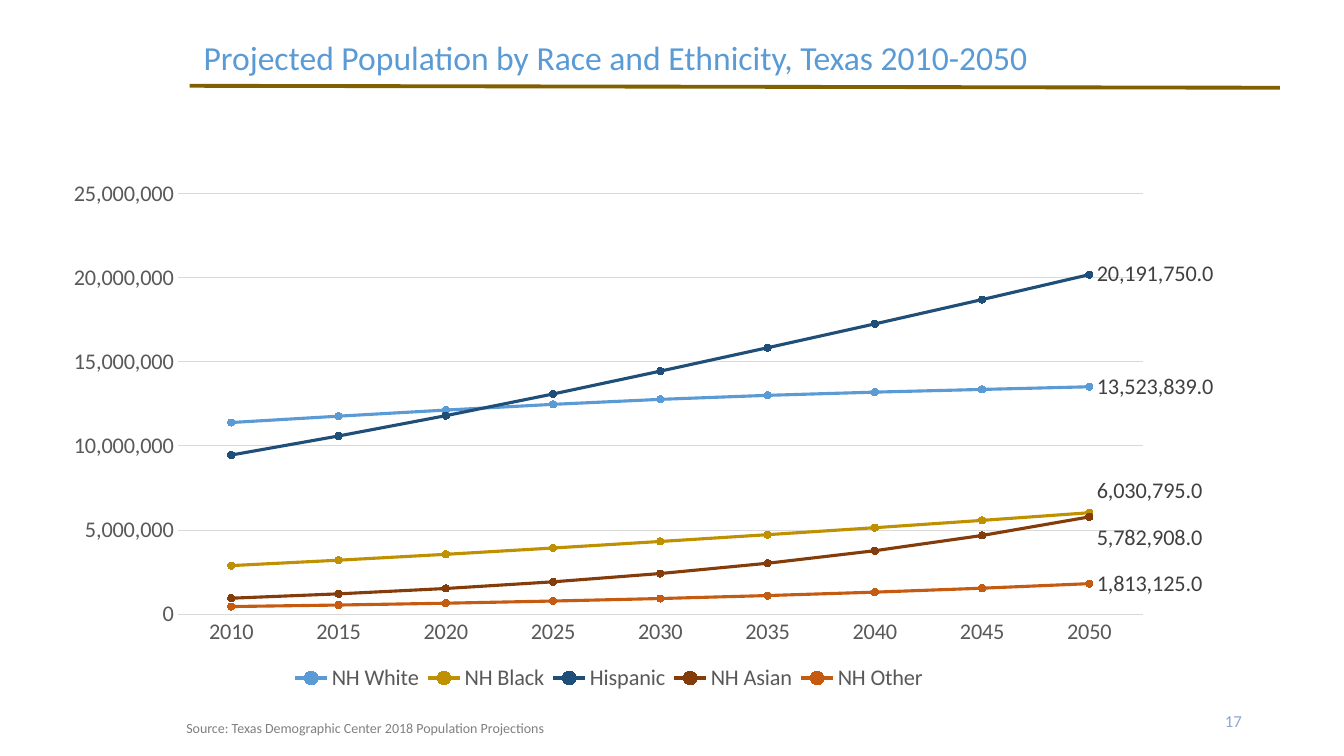
from dataclasses import dataclass

from lxml import etree
from pptx import Presentation
from pptx import util as u
from pptx.chart import data
from pptx.dml.color import RGBColor
from pptx.enum import chart as ch, shapes, text
from pptx.oxml import ns

Pt = u.Pt


@dataclass(frozen=True)
class Theme:
    font: str = "Calibri"
    title: str = "5B9BD5"
    rule: str = "806000"
    page: str = "8FA5D1"
    note: str = "808080"
    axis: str = "595959"
    label: str = "404040"
    grid: str = "D9D9D9"
    big: int = 24
    mid: int = 16
    small: int = 12
    tiny: int = 10


THEME = Theme()
YEARS = [str(year) for year in range(2010, 2051, 5)]

# Name, colour, end label shift (share of chart width and height), values
GROUPS = [
    ("NH White", "5B9BD5", None,
     (11397345, 11773981, 12138523, 12478060, 12774056,
      13013921, 13203514, 13364537, 13523839)),
    ("NH Black", "BF9000", (0, -0.04),
     (2886825, 3207833, 3557892, 3931512, 4322983,
      4725913, 5141963, 5575549, 6030795)),
    ("Hispanic", "1F4E79", None,
     (9460921, 10594952, 11804659, 13094633, 14452949,
      15845750, 17260820, 18706844, 20191750)),
    ("NH Asian", "843C0B", (0, 0.04),
     (948426, 1206812, 1525629, 1921363, 2414732,
      3025663, 3772125, 4678035, 5782908)),
    ("NH Other", "C55A11", None,
     (452044, 542674, 651069, 779336, 929709,
      1105260, 1308068, 1542075, 1813125)),
]


def rgb(code):
    return RGBColor.from_string(code)


def style(font, size, color):
    font.name = THEME.font
    font.size = Pt(size)
    font.color.rgb = rgb(color)


def stroke(line, color, width):
    line.color.rgb = rgb(color)
    line.width = Pt(width)


def write(shape, words, size, color, align, anchor):
    frame = shape.text_frame
    frame.word_wrap = True
    frame.vertical_anchor = anchor
    para = frame.paragraphs[0]
    para.alignment = align
    run = para.add_run()
    run.text = words
    style(run.font, size, color)
    return para


def add_note(slide, box, *args):
    return write(slide.shapes.add_textbox(*map(Pt, box)), *args)


def add_title(slide, box, words):
    shape = slide.shapes.title
    shape.left, shape.top, shape.width, shape.height = map(Pt, box)
    para = write(shape, words, THEME.big, THEME.title,
                 text.PP_ALIGN.LEFT, text.MSO_ANCHOR.MIDDLE)
    para.line_spacing = 0.9


def add_rule(slide, *ends):
    rule = slide.shapes.add_connector(
        shapes.MSO_CONNECTOR.STRAIGHT, *map(Pt, ends))
    stroke(rule.line, THEME.rule, 2.75)
    etree.SubElement(rule._element.spPr, ns.qn("a:effectLst"))


def set_place(layout, **parts):
    """Fill a chart layout element with manual settings."""
    manual = etree.SubElement(layout, ns.qn("c:manualLayout"))
    for tag, val in parts.items():
        etree.SubElement(manual, ns.qn("c:" + tag), val=str(val))


def new_layout(parent, spot):
    layout = etree.Element(ns.qn("c:layout"))
    parent.insert(spot, layout)
    return layout


def style_axes(chart):
    for axis in (chart.category_axis, chart.value_axis):
        axis.major_tick_mark = axis.minor_tick_mark = ch.XL_TICK_MARK.NONE
        style(axis.tick_labels.font, THEME.mid, THEME.axis)
    stroke(chart.category_axis.format.line, THEME.grid, 0.75)
    axis = chart.value_axis
    axis.minimum_scale, axis.maximum_scale = 0, 25_000_000
    axis.major_unit = 5_000_000
    axis.format.line.fill.background()
    stroke(axis.major_gridlines.format.line, THEME.grid, 0.75)
    axis.tick_labels.number_format = "#,##0"
    axis.tick_labels.number_format_is_linked = False


def style_line(line, color, shift):
    line.smooth = False
    stroke(line.format.line, color, 2.25)
    mark = line.marker
    mark.style = ch.XL_MARKER_STYLE.CIRCLE
    mark.size = 5
    mark.format.fill.solid()
    mark.format.fill.fore_color.rgb = rgb(color)
    stroke(mark.format.line, color, 0.75)

    # Value label on the last point only
    line.data_labels.show_value = False
    last = len(YEARS) - 1
    label = line.points[last].data_label
    style(label.font, THEME.mid, THEME.label)
    label.position = ch.XL_LABEL_POSITION.RIGHT
    node = line.data_labels._element.find(ns.qn("c:dLbl"))
    form = etree.Element(ns.qn("c:numFmt"), formatCode="#,##0.0",
                         sourceLinked="0")
    node.insert(1, form)
    if shift:
        set_place(new_layout(node, 1), x=shift[0], y=shift[1])


def add_lines(slide, box):
    source = data.CategoryChartData(number_format="#,##0")
    source.categories = YEARS
    for name, _, _, vals in GROUPS:
        source.add_series(name, vals)
    chart = slide.shapes.add_chart(
        ch.XL_CHART_TYPE.LINE_MARKERS, *map(Pt, box), source).chart
    chart.has_title = False
    style(chart.font, THEME.mid, THEME.axis)
    style_axes(chart)
    for line, (_, color, shift, _) in zip(chart.plots[0].series, GROUPS):
        style_line(line, color, shift)

    # Plot area and legend places
    area = chart._chartSpace.chart.plotArea
    layout = area.find(ns.qn("c:layout"))
    if layout is None:
        layout = new_layout(area, 0)
    set_place(layout, layoutTarget="inner", xMode="edge", yMode="edge",
              x=0.106, y=0.046, w=0.837, h=0.793)
    chart.has_legend = True
    legend = chart.legend
    legend.position = ch.XL_LEGEND_POSITION.BOTTOM
    legend.include_in_layout = False
    style(legend.font, THEME.mid, THEME.axis)
    node = legend._element
    layout = node.find(ns.qn("c:layout"))
    if layout is None:
        layout = new_layout(node, 1)
    set_place(layout, xMode="edge", yMode="edge",
              x=0.2, y=0.94, w=0.56, h=0.06)


def main():
    deck = Presentation()
    deck.slide_width, deck.slide_height = Pt(960), Pt(540)
    slide = deck.slides.add_slide(deck.slide_layouts[5])

    # Heading
    add_rule(slide, 135.5, 61.3, 914.3, 62.7)
    add_title(slide, (138.2, 5.8, 735.8, 74.2),
              "Projected Population by Race and Ethnicity, Texas 2010-2050")

    # Chart
    add_lines(slide, (39.6, 121, 828, 378.7))

    # Source and page number
    add_note(slide, (126, 510.5, 690, 19.4),
             "Source: Texas Demographic Center 2018 Population Projections",
             THEME.tiny, THEME.note, text.PP_ALIGN.LEFT, text.MSO_ANCHOR.TOP)
    add_note(slide, (678.2, 500.4, 216, 28.8), "17", THEME.small, THEME.page,
             text.PP_ALIGN.RIGHT, text.MSO_ANCHOR.MIDDLE)
    deck.save("out.pptx")


if __name__ == "__main__":
    main()
